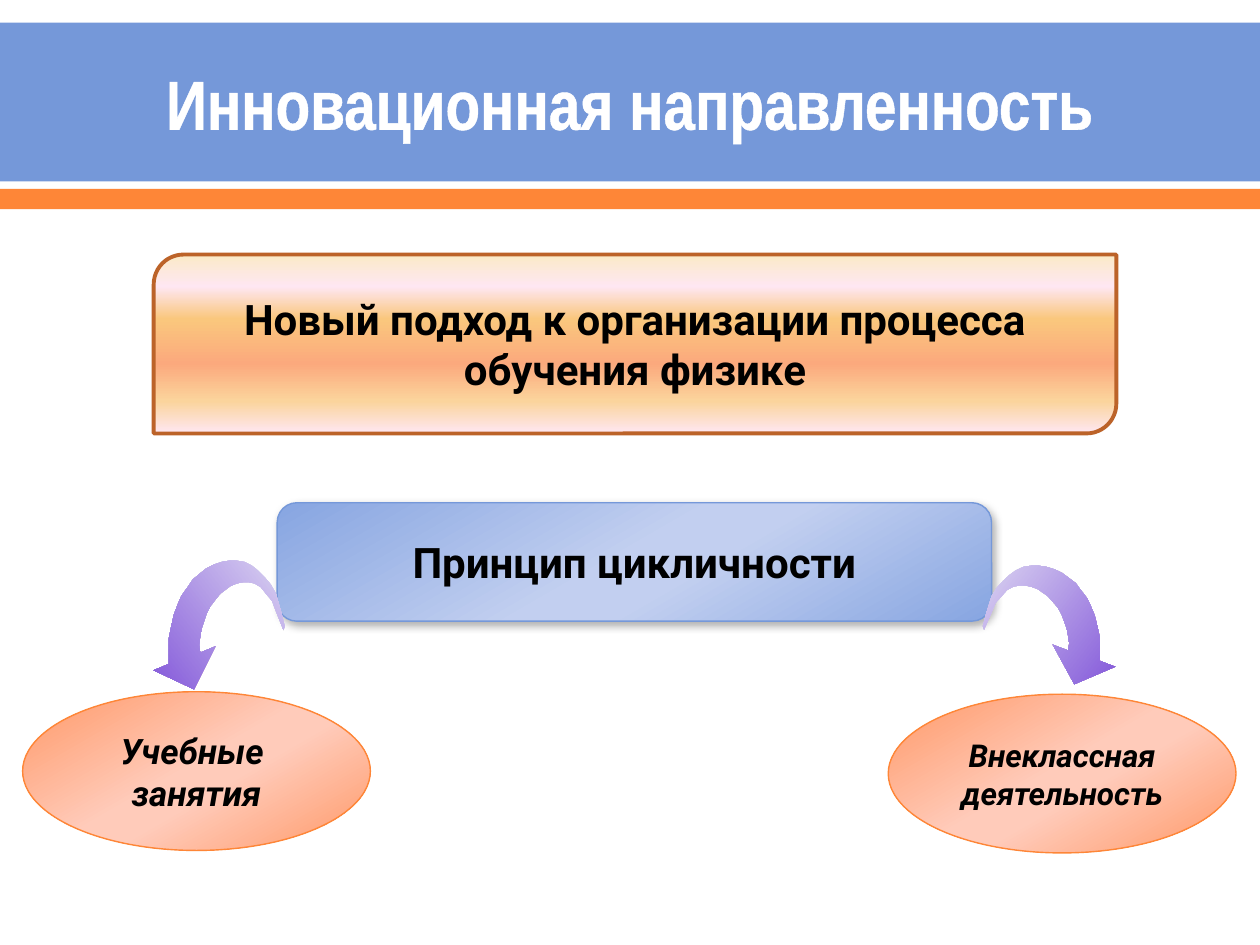
"""Build the slide on the innovative focus of physics teaching."""
from lxml import etree
from pptx import Presentation
from pptx.dml.color import RGBColor
from pptx.enum.shapes import MSO_SHAPE
from pptx.enum.text import MSO_ANCHOR, MSO_AUTO_SIZE, PP_ALIGN
from pptx.oxml.ns import qn
from pptx.util import Inches, Pt

RECTANGLE = MSO_SHAPE.RECTANGLE
DIAGONAL = MSO_SHAPE.ROUND_2_DIAG_RECTANGLE
ROUNDED = MSO_SHAPE.ROUNDED_RECTANGLE
ELLIPSE = MSO_SHAPE.OVAL
MIDDLE = MSO_ANCHOR.MIDDLE
CENTER = PP_ALIGN.CENTER
NO_AUTOFIT = MSO_AUTO_SIZE.NONE

COLUMNS, ROWS = 100, 75
UNIT = Inches(10) // COLUMNS

THEME = {
    "blue": "7598D9", "orange": "FE8637", "brown": "BC6329",
    "white": "FFFFFF", "black": "000000",
    "title": {"name": "Arial Narrow", "size": Pt(39.6), "bold": True},
    "box": {"name": "Roboto", "size": Pt(24), "bold": True},
    "lesson": {"name": "Roboto", "size": Pt(20), "bold": True, "italic": True},
    "activity": {"name": "Roboto", "size": Pt(18), "bold": True, "italic": True},
    "sunset": (90, [(0, "FBEAC7"), (18, "FEE7F2"), (36, "FAC77D"),
                    (61, "FBA97D"), (82, "FBD49C"), (100, "FEE7F2")]),
    "sky": (60, [(0, "87A5E1"), (48, "C2CFF0"), (58, "C2CFF0"), (100, "87A5E1")]),
    "peach": (60, [(0, "FF9867"), (48, "FFCBBA"), (58, "FFCBBA"), (100, "FF9867")]),
    "violet": [(0, "DAD3F1"), (100, "855ADA")],
}

TITLE = ("Инновационная направленность", (5, 2, 90, 12.2))
BANDS = [("blue", (0, 1.8, COLUMNS, 12.6)), ("orange", (0, 15, COLUMNS, 1.6))]
BOXES = [
    {"kind": DIAGONAL, "at": (12.2, 20.2, 76.4, 14.2), "fill": "sunset",
     "line": ("brown", 2.22), "font": "box",
     "lines": ["Новый подход к организации процесса обучения физике"]},
    {"kind": ROUNDED, "at": (22, 39.9, 56.7, 9.4), "fill": "sky",
     "line": ("blue", 0.79), "font": "box", "shadow": True,
     "lines": ["Принцип цикличности"]},
    {"kind": ELLIPSE, "at": (1.8, 54.9, 27.6, 12.6), "fill": "peach",
     "line": ("orange", 0.79), "font": "lesson",
     "lines": ["Учебные ", "занятия"]},
    {"kind": ELLIPSE, "at": (70.5, 55.1, 27.6, 12.6), "fill": "peach",
     "line": ("orange", 0.79), "font": "activity", "inset": 0,
     "lines": ["Внеклассная", "деятельность"]},
]

ARROW_SIZE = (10.4, 10.2)
ARROW_OUTLINE = [
    (10.4, 5.2), (10.1, 4), (9.7, 2.6), (9.3, 1.9), (8.8, 1.3), (8.3, 0.8),
    (7.8, 0.4), (7.2, 0.1), (6.6, 0), (6, 0), (5.4, 0.1), (4.8, 0.3), (4.2, 0.6),
    (3.7, 1), (3.1, 1.5), (2.7, 2.1), (2.2, 2.8), (1.9, 3.5), (1.6, 4.3),
    (1.4, 5.2), (1.2, 6.2), (1.2, 7.2), (1.2, 8.2), (0, 8.7), (3.2, 10.2),
    (4.9, 6.8), (3.7, 7.3), (3.6, 6.7), (3.7, 6), (3.8, 5.4), (4, 4.8),
    (4.2, 4.2), (4.5, 3.6), (4.9, 3.1), (5.3, 2.6), (5.7, 2.3), (6.1, 2),
    (6.6, 1.8), (7.1, 1.7), (7.5, 1.7), (8, 1.8), (8.5, 2.1), (8.9, 2.6),
    (9.4, 3.2), (9.7, 4), (10.1, 5), (10.3, 5.5),
]
ARROWS = [
    {"at": (12.2, 44.5, 10.4, 10.2), "mirrored": False, "angle": 142},
    {"at": (78, 44.9, 10.5, 9.4), "mirrored": True, "angle": 38},
]


def grid(values):
    return [round(value * UNIT) for value in values]


def rgb(name):
    return RGBColor.from_string(THEME[name])


def paint_gradient(shape, angle, stops):
    shape.fill.gradient()
    shape.fill.gradient_angle = 360 - angle
    stop_list = next(shape.element.spPr.iter(qn("a:gsLst")))
    for stop in list(stop_list):
        stop_list.remove(stop)
    for position, color in stops:
        stop = etree.SubElement(stop_list, qn("a:gs"), pos=str(position * 1000))
        etree.SubElement(stop, qn("a:srgbClr"), val=color)


def add_shadow(shape):
    effects = shape.element.spPr.find(qn("a:effectLst"))
    shadow = etree.SubElement(
        effects, qn("a:outerShdw"), blurRad=str(Pt(5)), dist=str(Pt(2)),
        dir=str(60 * 60000), algn="ctr", rotWithShape="0")
    color = etree.SubElement(shadow, qn("a:srgbClr"), val=THEME["black"])
    etree.SubElement(color, qn("a:alpha"), val="30000")


def write(frame, lines, font, color):
    frame.word_wrap = True
    frame.auto_size = NO_AUTOFIT
    frame.vertical_anchor = MIDDLE
    frame.text = "\n".join(lines)
    for paragraph in frame.paragraphs:
        paragraph.alignment = CENTER
        run_font = paragraph.runs[0].font
        for attribute, value in THEME[font].items():
            setattr(run_font, attribute, value)
        run_font.color.rgb = rgb(color)


def add_band(slide, color, at):
    band = slide.shapes.add_shape(RECTANGLE, *grid(at))
    band.shadow.inherit = False
    band.fill.solid()
    band.fill.fore_color.rgb = rgb(color)
    band.line.fill.background()


def add_title(slide, text, at):
    title = slide.shapes.title
    title.left, title.top, title.width, title.height = grid(at)
    write(title.text_frame, [text], "title", "white")
    properties = title.text_frame.paragraphs[0].runs[0].font._element
    outline = etree.Element(qn("a:ln"), w=str(Pt(1.1)))
    fill = etree.SubElement(outline, qn("a:solidFill"))
    etree.SubElement(fill, qn("a:srgbClr"), val=THEME["white"])
    properties.insert(0, outline)
    slide.shapes.element.append(title.element)


def add_box(slide, box):
    shape = slide.shapes.add_shape(box["kind"], *grid(box["at"]))
    shape.shadow.inherit = False
    paint_gradient(shape, *THEME[box["fill"]])
    color, width = box["line"]
    shape.line.color.rgb = rgb(color)
    shape.line.width = Pt(width)
    if box.get("shadow"):
        add_shadow(shape)
    frame = shape.text_frame
    if "inset" in box:
        for side in ("left", "top", "right", "bottom"):
            setattr(frame, f"margin_{side}", box["inset"])
    write(frame, box["lines"], box["font"], "black")


def add_arrow(slide, arrow):
    left, top, width, height = arrow["at"]
    points = []
    for x, y in ARROW_OUTLINE:
        share = x / ARROW_SIZE[0]
        across = 1 - share if arrow["mirrored"] else share
        points.append(grid((left + across * width, top + y / ARROW_SIZE[1] * height)))
    builder = slide.shapes.build_freeform(*points[0])
    builder.add_line_segments(points[1:], close=True)
    shape = builder.convert_to_shape()
    shape.shadow.inherit = False
    paint_gradient(shape, arrow["angle"], THEME["violet"])
    shape.line.fill.background()


def main():
    presentation = Presentation()
    presentation.slide_width = COLUMNS * UNIT
    presentation.slide_height = ROWS * UNIT
    slide = presentation.slides.add_slide(presentation.slide_layouts[5])
    for color, at in BANDS:
        add_band(slide, color, at)
    add_title(slide, *TITLE)
    for box in BOXES:
        add_box(slide, box)
    for arrow in ARROWS:
        add_arrow(slide, arrow)
    presentation.save("out.pptx")


if __name__ == "__main__":
    main()
